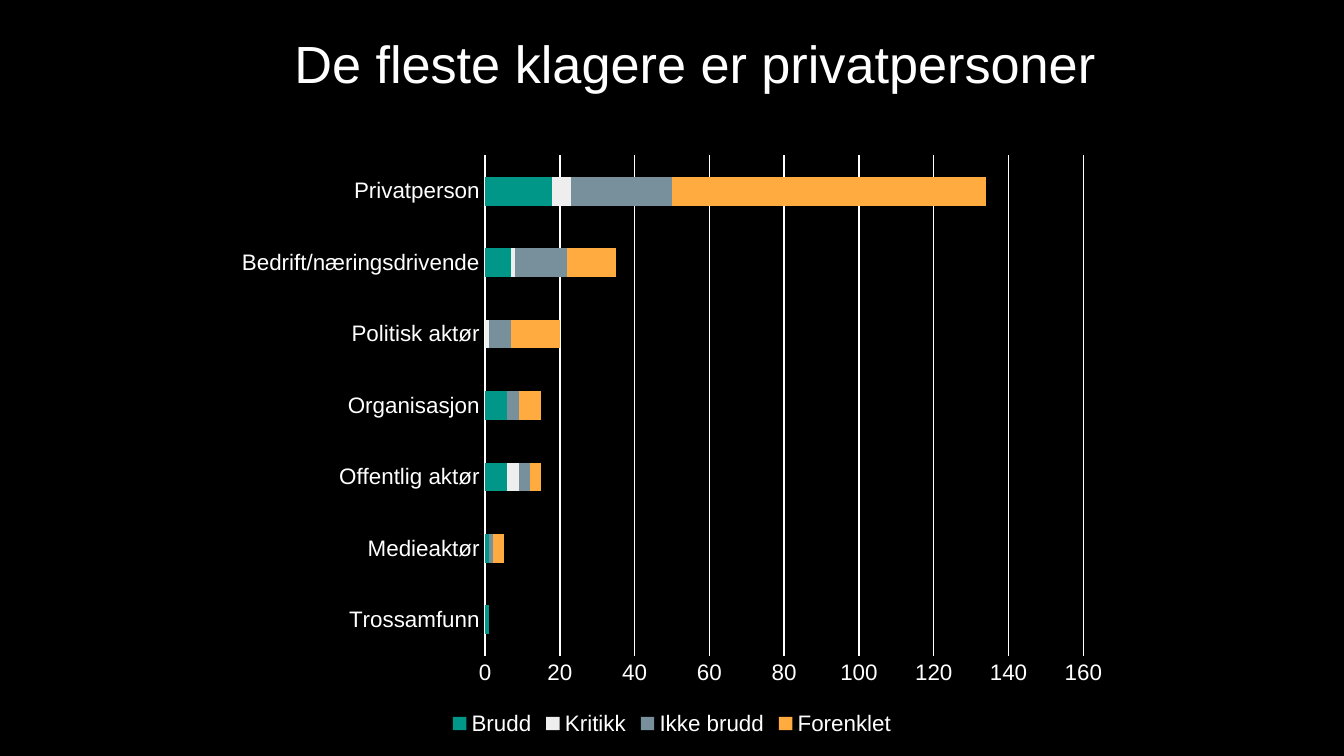
from pptx import Presentation
from pptx.chart.data import CategoryChartData
from pptx.dml.color import RGBColor
from pptx.enum.chart import XL_CHART_TYPE, XL_LEGEND_POSITION, XL_TICK_MARK
from pptx.enum.text import MSO_ANCHOR, MSO_AUTO_SIZE, PP_ALIGN
from pptx.util import Inches, Pt

COLORS = {
    "background": "000000",
    "text": "FFFFFF",
    "Brudd": "009688",
    "Kritikk": "EEEEEE",
    "Ikke brudd": "78909C",
    "Forenklet": "FFAB40",
}
COMPLAINANTS = ["Trossamfunn", "Medieaktør", "Offentlig aktør", "Organisasjon",
                "Politisk aktør", "Bedrift/næringsdrivende", "Privatperson"]
OUTCOMES = {
    "Brudd": [1, 1, 6, 6, None, 7, 18],
    "Kritikk": [None, None, 3, None, 1, 1, 5],
    "Ikke brudd": [None, 1, 3, 3, 6, 14, 27],
    "Forenklet": [None, 3, 3, 6, 13, 13, 84],
}


def rgb(name):
    return RGBColor.from_string(COLORS[name])


class SlideBuilder:
    font = "Arial"

    def __init__(self, prs):
        self.prs = prs
        self.slide = prs.slides.add_slide(prs.slide_layouts[5])
        fill = self.slide.background.fill
        fill.solid()
        fill.fore_color.rgb = rgb("background")

    def box(self, x, y, w, h):
        """Turn percentages of the slide's size into lengths."""
        col, row = self.prs.slide_width / 100, self.prs.slide_height / 100
        return round(x * col), round(y * row), round(w * col), round(h * row)

    def style(self, font, size):
        font.name = self.font
        font.size = Pt(size)
        font.color.rgb = rgb("text")

    def title(self, text, *share):
        sp = self.slide.shapes.title
        sp.left, sp.top, sp.width, sp.height = self.box(*share)
        tf = sp.text_frame
        tf.word_wrap = False
        tf.auto_size = MSO_AUTO_SIZE.NONE
        tf.vertical_anchor = MSO_ANCHOR.TOP
        p = tf.paragraphs[0]
        p.alignment = PP_ALIGN.LEFT
        r = p.add_run()
        r.text = text
        self.style(r.font, 28)

    def white_line(self, line):
        line.color.rgb = rgb("text")
        line.width = Pt(0.75)

    def stacked_bars(self, categories, series, *share):
        data = CategoryChartData()
        data.categories = categories
        for name, values in series.items():
            data.add_series(name, values)
        chart = self.slide.shapes.add_chart(
            XL_CHART_TYPE.BAR_STACKED, *self.box(*share), data).chart
        chart.has_title = False
        self.style(chart.font, 10)

        # Bars
        plot = chart.plots[0]
        plot.gap_width, plot.overlap = 150, 100
        plot.vary_by_categories = False
        for bars in plot.series:
            bars.format.fill.solid()
            bars.format.fill.fore_color.rgb = rgb(bars.name)

        # Axes
        for axis in (chart.category_axis, chart.value_axis):
            axis.major_tick_mark = axis.minor_tick_mark = XL_TICK_MARK.NONE
            self.style(axis.tick_labels.font, 12)
        self.white_line(chart.category_axis.format.line)
        values = chart.value_axis
        values.minimum_scale, values.maximum_scale, values.major_unit = 0, 160, 20
        values.format.line.fill.background()
        values.has_major_gridlines = True
        self.white_line(values.major_gridlines.format.line)

        # Legend
        chart.has_legend = True
        chart.legend.position = XL_LEGEND_POSITION.BOTTOM
        chart.legend.include_in_layout = False
        self.style(chart.legend.font, 12)


def main():
    prs = Presentation()
    prs.slide_width = Inches(10)
    prs.slide_height = prs.slide_width * 9 // 16
    s = SlideBuilder(prs)
    s.title("De fleste klagere er privatpersoner", 20.9, 3.3, 62.4, 14.4)
    s.stacked_bars(COMPLAINANTS, OUTCOMES, 16.67, 19, 66.67, 79)
    prs.save("out.pptx")


if __name__ == "__main__":
    main()
